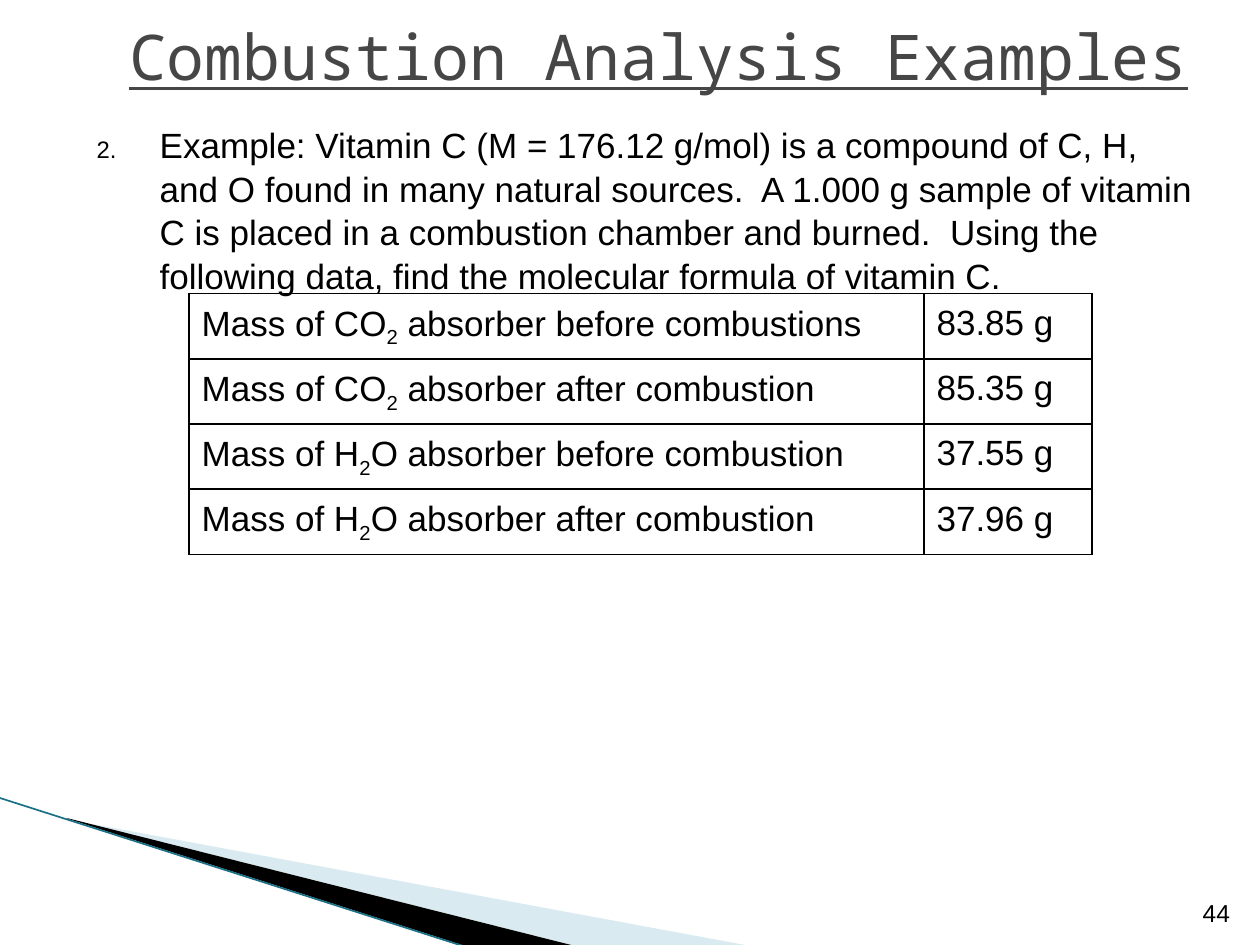
from dataclasses import dataclass

from lxml.etree import SubElement
from pptx import Presentation
from pptx.dml.color import RGBColor
from pptx.enum.shapes import MSO_CONNECTOR
from pptx.enum.text import MSO_ANCHOR, PP_ALIGN
from pptx.oxml import parse_xml
from pptx.oxml.ns import nsdecls, qn
from pptx.util import Pt


@dataclass
class Theme:
    ink: str = "000000"
    grey: str = "464646"
    pale: str = "A0CBDC"
    teal: str = "1A7085"
    sans: str = "Arial"
    mono: str = "Noto Sans Mono"
    head: int = 36
    body: int = 20
    small: int = 14


theme = Theme()


def style(para, size, face=theme.sans, color=theme.ink):
    for run in para.runs:
        run.font.size = Pt(size)
        run.font.name = face
        run.font.color.rgb = RGBColor.from_string(color)


def add_text(slide, box, text, anchor, align):
    frame = slide.shapes.add_textbox(*[Pt(v) for v in box]).text_frame
    frame.word_wrap = True
    frame.vertical_anchor = anchor
    frame.text = text
    para = frame.paragraphs[0]
    para.alignment = align
    return para


deck = Presentation()
deck.slide_width, deck.slide_height = Pt(720), Pt(540)
slide = deck.slides.add_slide(deck.slide_layouts[6])

# Corner wedges: points, colour, opacity in percent
wedges = [
    ([(39.6, 468.5), (428.4, 540.5), (328.5, 540.5), (39.6, 468)], theme.pale, 40),
    ([(38.2, 467.5), (329, 540.7), (267.8, 541.2), (38.9, 468)], theme.ink, 100),
]
for points, color, alpha in wedges:
    first, *rest = [(Pt(x), Pt(y)) for x, y in points]
    path = slide.shapes.build_freeform(*first)
    path.add_line_segments(rest, close=True)
    wedge = path.convert_to_shape()
    wedge.shadow.inherit = False
    wedge.fill.solid()
    wedge.fill.fore_color.rgb = RGBColor.from_string(color)
    wedge.line.fill.background()
    if alpha < 100:
        tint = wedge._element.spPr.find(".//" + qn("a:srgbClr"))
        SubElement(tint, qn("a:alpha"), val=str(alpha * 1000))

# Edge line along the wedges
edge = slide.shapes.add_connector(
    MSO_CONNECTOR.STRAIGHT, Pt(-0.7), Pt(455.8), Pt(267.1), Pt(541.4))
edge.line.color.rgb = RGBColor.from_string(theme.teal)
edge.line.width = Pt(0.95)
SubElement(edge._element.spPr, qn("a:effectLst"))

# Numbered problem
para = add_text(
    slide, (48.2, 66.2, 648, 419.8),
    "Example: Vitamin C (M = 176.12 g/mol) is a compound of C, H, and O found "
    "in many natural sources.  A 1.000 g sample of vitamin C is placed in a "
    "combustion chamber and burned.  Using the following data, find the "
    "molecular formula of vitamin C.",
    MSO_ANCHOR.TOP, PP_ALIGN.LEFT)
para.line_spacing = 1.04
props = para._p.get_or_add_pPr()
props.set("marL", str(Pt(36)))
props.set("indent", str(Pt(-36)))
SubElement(props, qn("a:buSzPct"), val="68000")
SubElement(props, qn("a:buFont"), typeface=theme.sans)
SubElement(props, qn("a:buAutoNum"), type="arabicPeriod", startAt="2")
style(para, theme.body)

# Slide number
para = add_text(slide, (666, 504.7, 43.9, 28.8), "44",
                MSO_ANCHOR.BOTTOM, PP_ALIGN.RIGHT)
style(para, theme.small)

# Title
para = add_text(slide, (54, 0, 644.4, 63.4), "Combustion Analysis Examples",
                MSO_ANCHOR.MIDDLE, PP_ALIGN.CENTER)
style(para, theme.head, theme.mono, theme.grey)
para.runs[0].font.underline = True

# Absorber masses: the label is split around its subscript
data = [
    (("Mass of CO", "2", " absorber before combustions"), "83.85 g"),
    (("Mass of CO", "2", " absorber after combustion"), "85.35 g"),
    (("Mass of H", "2", "O absorber before combustion"), "37.55 g"),
    (("Mass of H", "2", "O absorber after combustion"), "37.96 g"),
]
table = slide.shapes.add_table(
    len(data), 2, Pt(108), Pt(167.8), Pt(516), Pt(116.8)).table
table.first_row = table.horz_banding = False
table.columns[0].width, table.columns[1].width = Pt(420), Pt(96)
for row, (label, mass) in enumerate(data):
    table.rows[row].height = Pt(29.2)
    for col, parts in enumerate((label, (mass,))):
        cell = table.cell(row, col)
        para = cell.text_frame.paragraphs[0]
        para.line_spacing = 1.1
        for part in parts:
            para.add_run().text = part
        style(para, theme.body)
        if len(parts) > 1:
            para.runs[1]._r.get_or_add_rPr().set("baseline", "-25000")
        cell.fill.background()
        props = cell._tc.get_or_add_tcPr()
        for spot, side in enumerate("LRTB"):
            props.insert(spot, parse_xml(
                f'<a:ln{side} {nsdecls("a")} w="{Pt(1)}"><a:solidFill>'
                f'<a:srgbClr val="{theme.ink}"/></a:solidFill></a:ln{side}>'))

deck.save("out.pptx")
